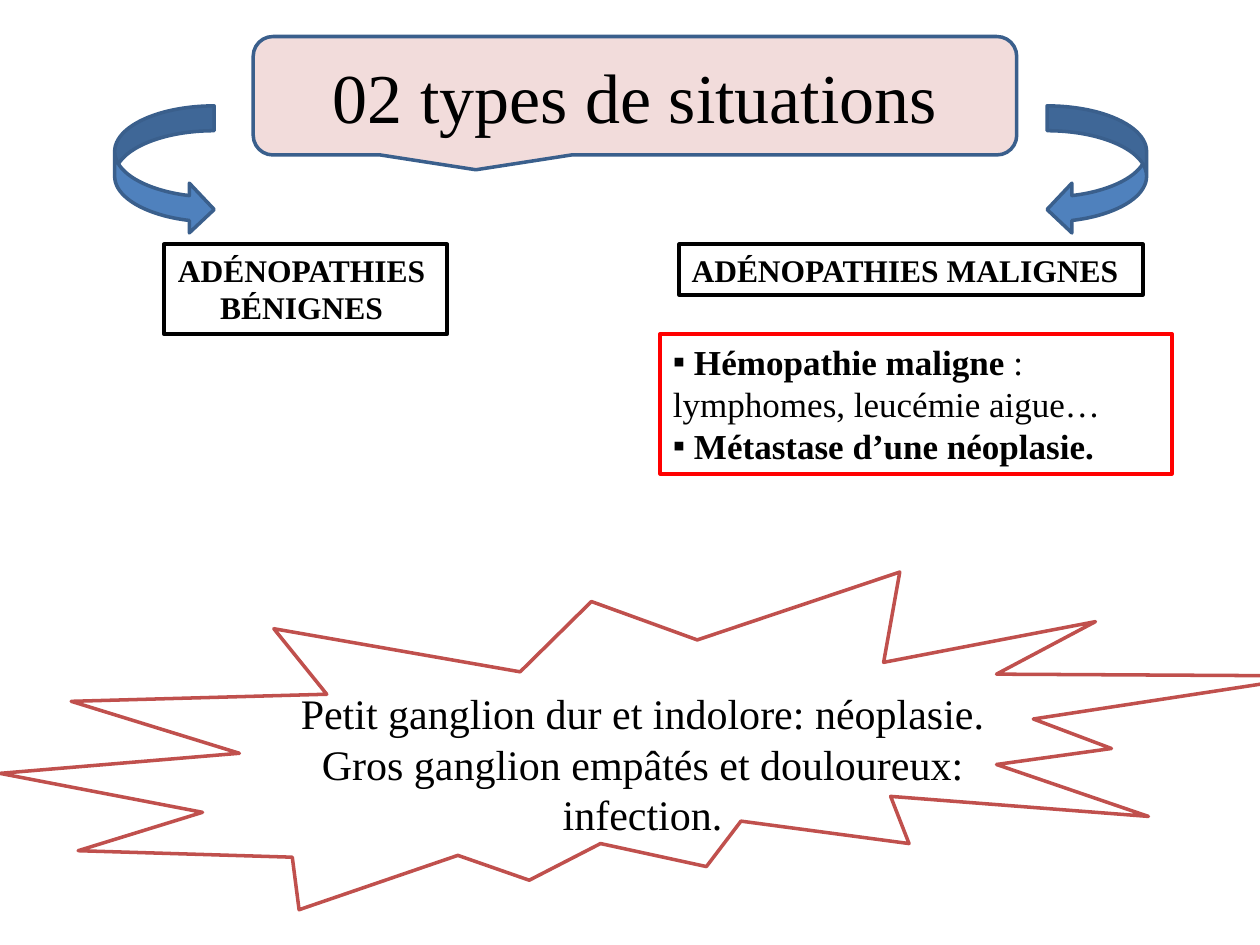
import dataclasses

import pptx
import pptx.dml.color
import pptx.enum.shapes
import pptx.enum.text
import pptx.util
from lxml import etree
from pptx.oxml.ns import qn

Inches = pptx.util.Inches
Pt = pptx.util.Pt
Kind = pptx.enum.shapes.MSO_SHAPE
Align = pptx.enum.text.PP_ALIGN
Anchor = pptx.enum.text.MSO_ANCHOR
Fit = pptx.enum.text.MSO_AUTO_SIZE


@dataclasses.dataclass(frozen=True)
class Theme:
    font: str = "Times New Roman"
    ink: str = "000000"
    paper: str = "FFFFFF"
    pink: str = "F2DCDB"
    blue: str = "4F81BD"
    navy: str = "3A5F8C"
    brick: str = "C0504D"
    red: str = "FF0000"
    title: int = 40
    note: int = 24
    list: int = 20
    label: int = 18
    thin: float = 2
    thick: float = 2.25


THEME = Theme()


def color(code):
    return pptx.dml.color.RGBColor.from_string(code)


def place(shape, box):
    shape.left, shape.top, shape.width, shape.height = map(Inches, box)


def paint(shape, fill, line, width):
    if fill:
        shape.fill.solid()
        shape.fill.fore_color.rgb = color(fill)
    else:
        shape.fill.background()
    shape.line.color.rgb = color(line)
    shape.line.width = Pt(width)


def draw(slide, kind, box, fill, line, width=THEME.thin):
    shape = slide.shapes.add_shape(kind, *map(Inches, box))
    shape.shadow.inherit = False
    paint(shape, fill, line, width)
    return shape


def mark(para, char):
    """Give the paragraph a bullet with no hanging indent."""
    props = para._p.get_or_add_pPr()
    props.set("marL", "0")
    props.set("indent", "0")
    etree.SubElement(props, qn("a:buFont"), typeface="Arial")
    etree.SubElement(props, qn("a:buChar"), char=char)


def write(shape, paras, size, align=Align.CENTER, anchor=Anchor.MIDDLE,
          wrap=True, fit=Fit.NONE, bullet=None):
    """Fill the shape with paragraphs, each a list of (text, bold) runs."""
    frame = shape.text_frame
    frame.word_wrap = wrap
    frame.auto_size = fit
    frame.vertical_anchor = anchor
    for i, runs in enumerate(paras):
        para = frame.add_paragraph() if i else frame.paragraphs[0]
        if bullet:
            mark(para, bullet)
        para.alignment = align
        para.space_before = Pt(0)
        for text, bold in runs:
            run = para.add_run()
            run.text = text
            run.font.name = THEME.font
            run.font.size = Pt(size)
            run.font.bold = bold
            run.font.color.rgb = color(THEME.ink)


def add_title(slide):
    """Lay the title over a callout that is drawn behind it."""
    box = (2.01, 0.29, 6.06, 0.94)
    bubble = draw(slide, Kind.ROUNDED_RECTANGULAR_CALLOUT, box,
                  THEME.pink, THEME.navy)
    title = slide.shapes.title
    bubble._element.addnext(title._element)
    place(title, box)
    write(title, [[("02 types de situations", False)]], THEME.title)


def add_list(slide):
    body = slide.placeholders[1]
    place(body, (5.24, 2.65, 4.06, 1.11))
    paint(body, None, THEME.red, THEME.thick)
    write(body, [
        [(" Hémopathie maligne", True),
         (" : lymphomes, leucémie aigue…", False)],
        [(" Métastase d’une néoplasie.", True)],
    ], THEME.list, Align.LEFT, Anchor.TOP, bullet="▪")


def add_label(slide, box, lines, align):
    label = draw(slide, Kind.RECTANGLE, box, None, THEME.ink, THEME.thick)
    write(label, [[(line, True)] for line in lines], THEME.label, align,
          Anchor.TOP, wrap=False, fit=Fit.SHAPE_TO_FIT_TEXT)


def add_note(slide):
    draw(slide, Kind.EXPLOSION2, (0, 4.54, 10.43, 2.68),
         THEME.paper, THEME.brick)
    note = slide.shapes.add_textbox(*map(Inches, (1.85, 5.4, 6.5, 1.72)))
    note.text_frame.margin_top = Inches(0.06)
    write(note, [
        [("Petit ganglion dur et indolore: néoplasie.", False)],
        [("Gros ganglion empâtés et douloureux: infection.", False)],
    ], THEME.note, anchor=Anchor.TOP)


def main():
    deck = pptx.Presentation()
    deck.slide_width, deck.slide_height = Inches(10), Inches(7.5)
    slide = deck.slides.add_slide(deck.slide_layouts[1])
    add_note(slide)
    add_title(slide)
    add_label(slide, (1.3, 1.94, 2.25, 0.71),
              ["ADÉNOPATHIES ", "BÉNIGNES "], Align.CENTER)
    add_list(slide)
    add_label(slide, (5.39, 1.94, 3.68, 0.4),
              ["ADÉNOPATHIES MALIGNES "], Align.LEFT)
    for kind, left in ((Kind.CURVED_RIGHT_ARROW, 0.91),
                       (Kind.CURVED_LEFT_ARROW, 8.31)):
        draw(slide, kind, (left, 0.84, 0.79, 1.02), THEME.blue, THEME.navy)
    deck.save("out.pptx")


if __name__ == "__main__":
    main()
